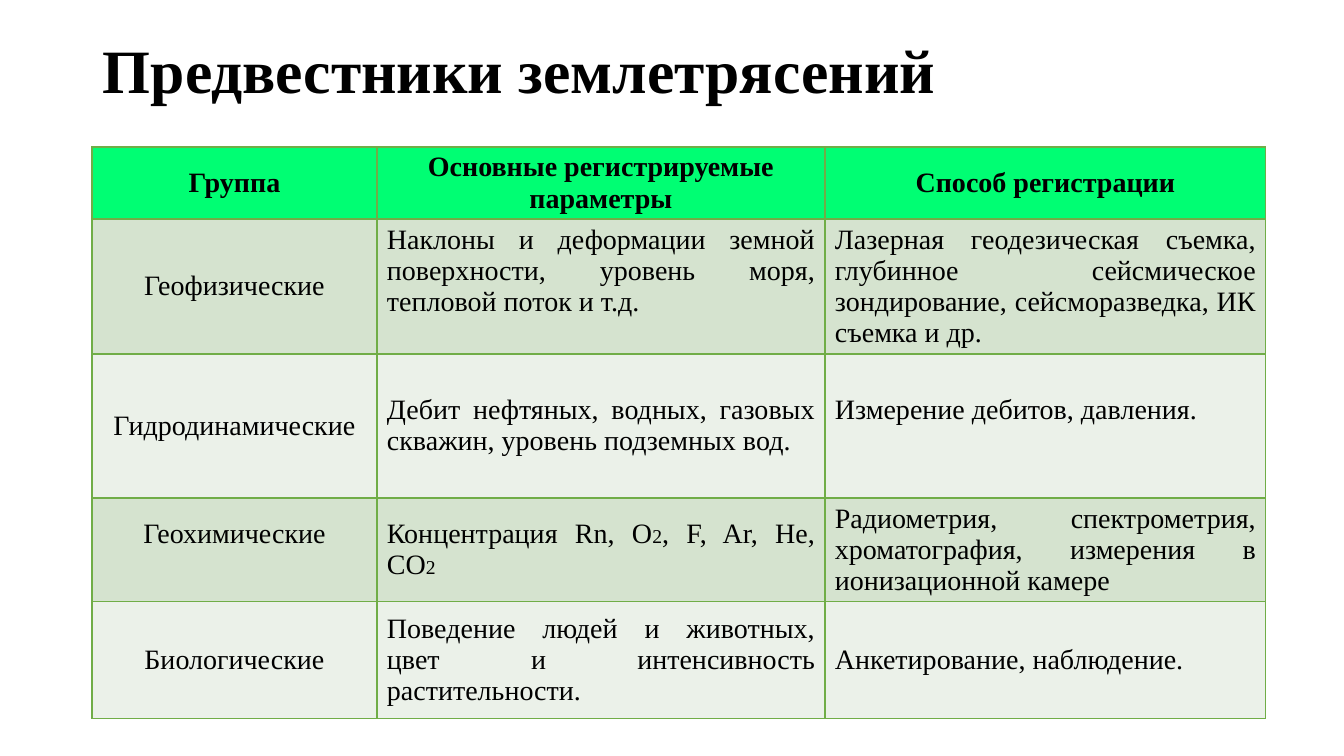
from dataclasses import dataclass
from lxml.etree import SubElement
from pptx import Presentation
from pptx.dml.color import RGBColor
from pptx.enum.text import MSO_ANCHOR, PP_ALIGN
from pptx.oxml.ns import qn
from pptx.util import Emu, Pt

# Content: a tuple inside a cell holds runs, with small digits at odd places
TITLE = "Предвестники землетрясений"
HEAD = ["Группа", "Основные регистрируемые параметры", "Способ регистрации"]
ROWS = [
    ["Геофизические",
     "Наклоны и деформации земной поверхности, уровень моря, тепловой поток и т.д.",
     "Лазерная геодезическая съемка, глубинное сейсмическое зондирование, "
     "сейсморазведка, ИК съемка и др."],
    ["Гидродинамические",
     "Дебит нефтяных, водных, газовых скважин, уровень подземных вод.",
     "Измерение дебитов, давления."],
    ["Геохимические",
     ("Концентрация Rn, O", "2", ", F, Ar, He, CO", "2"),
     "Радиометрия, спектрометрия, хроматография, измерения в ионизационной камере"],
    ["Биологические",
     "Поведение людей и животных, цвет и интенсивность растительности.",
     "Анкетирование, наблюдение."],
]
RAISED = {(1, 1), (2, 2), (3, 0)}  # cells whose text sits half a line higher

# Layout in px
SLIDE = (1344, 756)
TITLE_BOX = (93, 1, 1159, 146)
LEFT, TOP = 92, 147
COLS = [285, 448, 441]
HEIGHTS = [72, 135, 144, 104, 117]
PAD, LINE = 10, 31


@dataclass
class Theme:
    font: str = "Times New Roman"
    ink: str = "000000"
    head: str = "00FE73"
    bands: tuple = ("D5E3CF", "EBF1E9")
    edge: str = "70AD47"
    title: int = 44
    body: int = 20
    small: int = 14


THEME = Theme()


def px(n):
    return Emu(round(n * 914400 / 100.8))


def style(par, size, bold):
    font = par.font
    font.name, font.size, font.bold = THEME.font, Pt(size), bold
    font.color.rgb = RGBColor.from_string(THEME.ink)


def border(cell):
    props = cell._tc.get_or_add_tcPr()
    for n, side in enumerate(("lnL", "lnR", "lnT", "lnB")):
        line = props.makeelement(qn(f"a:{side}"), {"w": str(Pt(1))})
        fill = SubElement(line, qn("a:solidFill"))
        SubElement(fill, qn("a:srgbClr"), val=THEME.edge)
        props.insert(n, line)


def put(cell, text, row, col):
    # Fill, borders and margins
    color = THEME.bands[(row - 1) % 2] if row else THEME.head
    cell.fill.solid()
    cell.fill.fore_color.rgb = RGBColor.from_string(color)
    border(cell)
    cell.vertical_anchor = MSO_ANCHOR.MIDDLE
    cell.margin_left = cell.margin_right = px(PAD)
    cell.margin_top = 0
    cell.margin_bottom = px(LINE if (row, col) in RAISED else 0)

    # Text
    par = cell.text_frame.paragraphs[0]
    par.alignment = PP_ALIGN.JUSTIFY if row and col else PP_ALIGN.CENTER
    style(par, THEME.body, row == 0)
    for n, part in enumerate(text if isinstance(text, tuple) else (text,)):
        run = par.add_run()
        run.text = part
        font = run.font
        font.name, font.bold = THEME.font, row == 0
        font.size = Pt(THEME.small if n % 2 else THEME.body)
        font.color.rgb = RGBColor.from_string(THEME.ink)


def main():
    deck = Presentation()
    deck.slide_width, deck.slide_height = map(px, SLIDE)
    slide = deck.slides.add_slide(deck.slide_layouts[6])

    # Title
    frame = slide.shapes.add_textbox(*map(px, TITLE_BOX)).text_frame
    frame.word_wrap = True
    frame.vertical_anchor = MSO_ANCHOR.MIDDLE
    par = frame.paragraphs[0]
    par.text = TITLE
    par.line_spacing = 0.9
    style(par, THEME.title, True)

    # Table
    data = [HEAD] + ROWS
    box = map(px, (LEFT, TOP, sum(COLS), sum(HEIGHTS)))
    table = slide.shapes.add_table(len(data), len(COLS), *box).table
    for col, width in zip(table.columns, COLS):
        col.width = px(width)
    for row, height in zip(table.rows, HEIGHTS):
        row.height = px(height)
    for r, line in enumerate(data):
        for c, text in enumerate(line):
            put(table.cell(r, c), text, r, c)

    deck.save("out.pptx")


if __name__ == "__main__":
    main()
